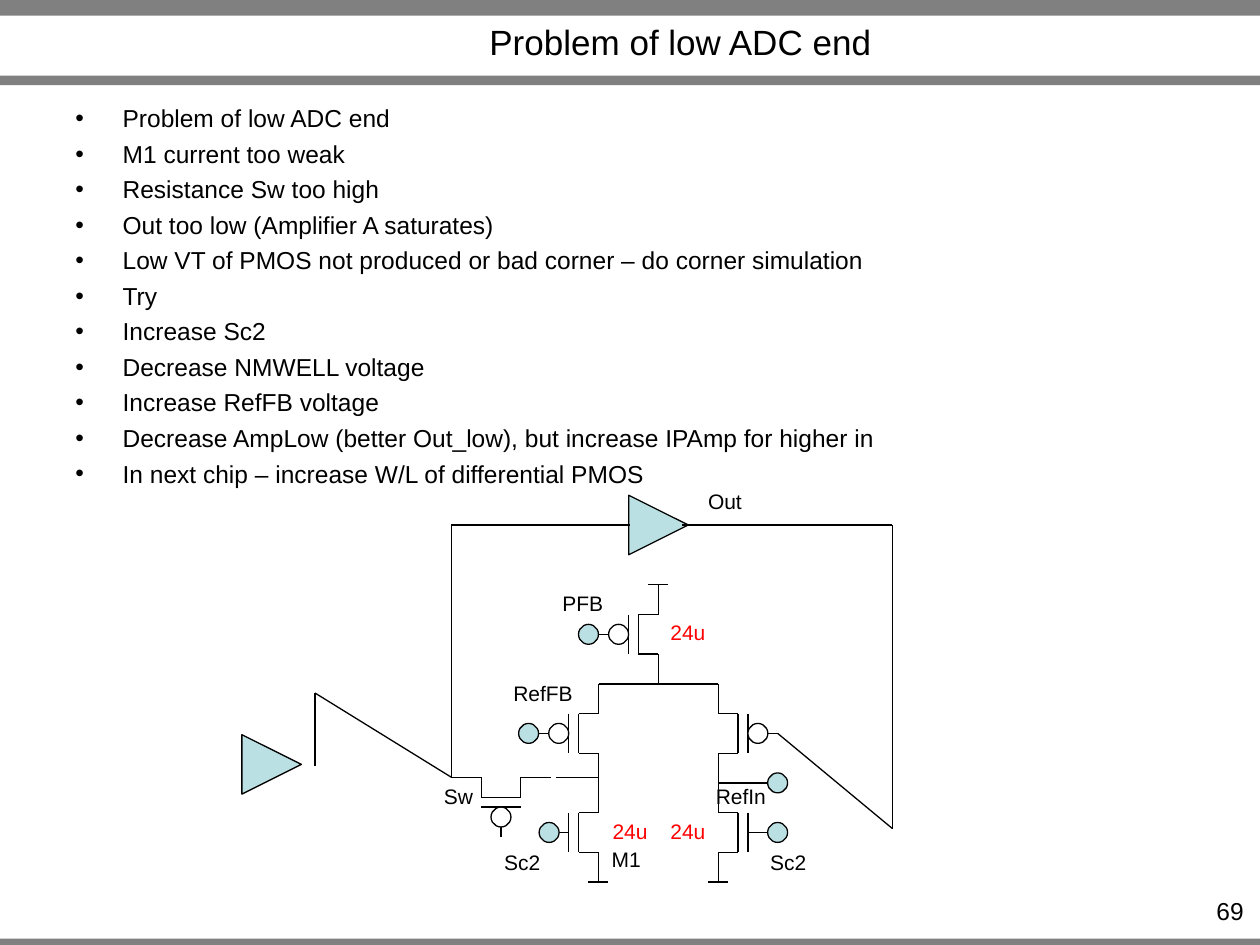
from lxml import etree
from pptx import Presentation
from pptx.dml.color import RGBColor
from pptx.enum.shapes import MSO_CONNECTOR, MSO_SHAPE
from pptx.enum.text import MSO_ANCHOR, PP_ALIGN
from pptx.oxml.ns import qn
from pptx.util import Pt

STRAIGHT = MSO_CONNECTOR.STRAIGHT
RECT, OVAL, TRIANGLE = MSO_SHAPE.RECTANGLE, MSO_SHAPE.OVAL, MSO_SHAPE.ISOSCELES_TRIANGLE
LEFT, CENTER, RIGHT = PP_ALIGN.LEFT, PP_ALIGN.CENTER, PP_ALIGN.RIGHT
MIDDLE = MSO_ANCHOR.MIDDLE

FONT = "Arial"
BLACK, WHITE, RED, GRAY, TEAL = "000000", "FFFFFF", "FF0000", "808080", "BBE0E3"
DOT, AMP = 11.4, 34

# Circuit grid: three columns and four levels, one transistor between levels
COL_L, COL_M, COL_R = (342 + 34.2 * i for i in range(3))
VDD, TAIL, DRAIN, GND = (334.2 + 56.6 * i for i in range(4))
MID = 28.3
SW_X, SW_Y = 258, 444.2
FB_X, FB_Y = 510, 300

BULLETS = [
    "Problem of low ADC end",
    "M1 current too weak",
    "Resistance Sw too high",
    "Out too low (Amplifier A saturates)",
    "Low VT of PMOS not produced or bad corner – do corner simulation",
    "Try",
    "Increase Sc2",
    "Decrease NMWELL voltage",
    "Increase RefFB voltage",
    "Decrease AmpLow (better Out_low), but increase IPAmp for higher in",
    "In next chip – increase W/L of differential PMOS",
]

# text, left, top, width, colour
LABELS = [
    ("PFB", 313.9, 334.1, 38.2, BLACK),
    ("RefFB", 285.8, 385.2, 49, BLACK),
    ("Sc2", 280.8, 481.7, 35.3, BLACK),
    ("Sc2", 432.7, 481.7, 35.3, BLACK),
    ("RefIn", 401.8, 444.2, 43.2, BLACK),
    ("24u", 342.7, 464.4, 34.6, RED),
    ("24u", 375.8, 464.4, 34.6, RED),
    ("24u", 375.8, 350.6, 34.6, RED),
    ("M1", 342, 480.2, 31.7, BLACK),
    ("Sw", 246.2, 444.2, 31.7, BLACK),
    ("Out", 397.4, 275.8, 33.8, BLACK),
]


def rgb(color):
    return RGBColor.from_string(color)


def add_run(p, text, size, color=BLACK):
    r = p.add_run()
    r.text = text
    r.font.name, r.font.size = FONT, Pt(size)
    r.font.color.rgb = rgb(color)


def add_text(s, text, x, y, w, h, size, align, color=BLACK, wrap=True):
    tf = s.shapes.add_textbox(Pt(x), Pt(y), Pt(w), Pt(h)).text_frame
    tf.word_wrap = wrap
    tf.paragraphs[0].alignment = align
    add_run(tf.paragraphs[0], text, size, color)


def add_solid(shapes, kind, x, y, w, h, fill, outlined=True):
    sp = shapes.add_shape(kind, Pt(x), Pt(y), Pt(w), Pt(h))
    sp.shadow.inherit = False
    sp.fill.solid()
    sp.fill.fore_color.rgb = rgb(fill)
    if outlined:
        sp.line.color.rgb = rgb(BLACK)
        sp.line.width = Pt(0.75)
    else:
        sp.line.fill.background()
    return sp


def add_dot(shapes, cx, cy, fill):
    add_solid(shapes, OVAL, cx - DOT / 2, cy - DOT / 2, DOT, DOT, fill)


def add_amplifier(s, x, y):
    add_solid(s.shapes, TRIANGLE, x, y, AMP, AMP, TEAL).rotation = 90


def add_wire(shapes, start, end):
    line = shapes.add_connector(STRAIGHT, *(Pt(v) for v in (*start, *end)))
    line.line.color.rgb = rgb(BLACK)
    line.line.width = Pt(0.75)
    etree.SubElement(line._element.spPr, qn("a:effectLst"))


def add_transistor(s, x, y, gate, pmos):
    """Draw a transistor whose channel starts at (x, y), its gate to the given side."""
    def place(along, across):
        return {"left": (x - across, y + along),
                "right": (x + across, y + along),
                "down": (x + along, y + across)}[gate]

    near, far, end = 17, 39.6, 56.6
    channel, plate, tip = 11.4, 17, 34
    wires = [
        ((0, 0), (near, 0)),
        ((near, 0), (near, channel)),
        ((far, 0), (far, channel)),
        ((near, channel), (far, channel)),
        ((near, plate), (far, plate)),
        ((far, 0), (end, 0)),
        ((MID, tip), (MID, plate)),
    ]
    shapes = s.shapes.add_group_shape().shapes
    for a, b in wires:
        add_wire(shapes, place(*a), place(*b))
    if pmos:
        add_dot(shapes, *place(MID, plate + DOT / 2), WHITE)


def add_title(s, text):
    sp = s.shapes.title
    sp.left, sp.top, sp.width, sp.height = Pt(93.6), Pt(10), Pt(590.4), Pt(27.4)
    tf = sp.text_frame
    tf.vertical_anchor = MIDDLE
    tf.paragraphs[0].alignment = CENTER
    add_run(tf.paragraphs[0], text, 20)


def add_bullets(s):
    tf = s.shapes.add_textbox(Pt(36), Pt(55.5), Pt(648), Pt(85)).text_frame
    tf.word_wrap = True
    for i, text in enumerate(BULLETS):
        p = tf.add_paragraph() if i else tf.paragraphs[0]
        pPr = p._p.get_or_add_pPr()
        pPr.set("marL", str(Pt(27)))
        pPr.set("indent", str(-Pt(27)))
        etree.SubElement(pPr, qn("a:buFont")).set("typeface", FONT)
        etree.SubElement(pPr, qn("a:buChar")).set("char", "•")
        p.alignment = LEFT
        if i:
            p.space_before = Pt(3.5)
        add_run(p, text, 14)


def add_circuit(s):
    add_transistor(s, COL_M, VDD, "left", True)
    add_transistor(s, COL_L, TAIL, "left", True)
    add_transistor(s, COL_R, TAIL, "right", True)
    add_transistor(s, COL_L, DRAIN, "left", False)
    add_transistor(s, COL_R, DRAIN, "right", False)
    add_transistor(s, SW_X, SW_Y, "down", True)

    for x, y in [(COL_M, VDD), (COL_L, GND), (COL_R, GND)]:
        add_wire(s.shapes, (x - DOT / 2, y), (x + DOT / 2, y))

    add_amplifier(s, 359.3, 283)
    add_amplifier(s, 138.2, 419.8)
    pin_x = COL_R + AMP
    wires = [
        ((COL_L, TAIL), (COL_R, TAIL)),
        ((pin_x, DRAIN), (COL_R, DRAIN)),
        ((pin_x, TAIL + MID), (FB_X, 473.5)),
        ((FB_X, FB_Y), (FB_X, 473.5)),
        ((FB_X, FB_Y), (390, FB_Y)),
        ((360, FB_Y), (SW_X, FB_Y)),
        ((SW_X, FB_Y), (SW_X, SW_Y)),
        ((180, 396), (SW_X, SW_Y)),
        ((180, 396), (180, 438)),
        ((COL_L, SW_Y), (318, SW_Y)),
    ]
    for start, end in wires:
        add_wire(s.shapes, start, end)

    nodes = [(COL_M - 39.9, VDD + MID), (COL_L - 39.9, TAIL + MID),
             (COL_L - 28.2, DRAIN + MID), (pin_x, DRAIN + MID), (pin_x, DRAIN)]
    for x, y in nodes:
        add_dot(s.shapes, x, y, TEAL)
    for text, x, y, w, color in LABELS:
        add_text(s, text, x, y, w, 21.6, 12, CENTER, color, wrap=False)


def main():
    prs = Presentation()
    prs.slide_width, prs.slide_height = Pt(720), Pt(540)
    s = prs.slides.add_slide(prs.slide_layouts[5])
    for y, h in [(536.4, 3.6), (0, 9), (43.2, 5.5)]:
        add_solid(s.shapes, RECT, 0, y, 720, h, GRAY, outlined=False)
    add_title(s, "Problem of low ADC end")
    add_bullets(s)
    add_circuit(s)
    add_text(s, "69", 655.2, 508.3, 62.6, 17.3, 14, RIGHT)
    prs.save("out.pptx")


if __name__ == "__main__":
    main()
